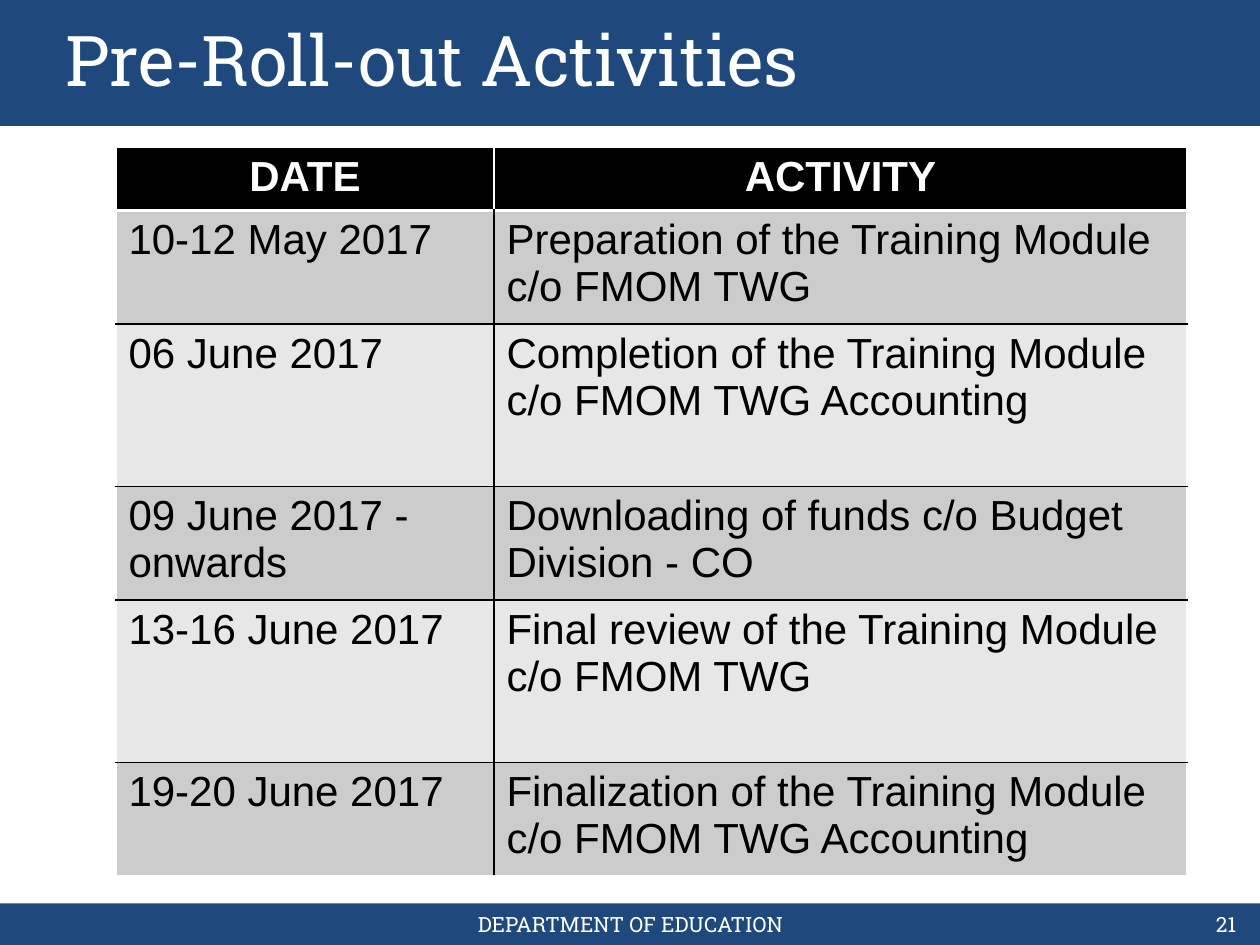
from dataclasses import dataclass

from lxml import etree
from pptx import Presentation
from pptx.dml.color import RGBColor
from pptx.enum.shapes import MSO_SHAPE
from pptx.enum.text import MSO_ANCHOR, PP_ALIGN
from pptx.oxml.ns import qn
from pptx.util import Inches, Pt

RECTANGLE = MSO_SHAPE.RECTANGLE
TOP, MIDDLE = MSO_ANCHOR.TOP, MSO_ANCHOR.MIDDLE
LEFT, CENTER, RIGHT = PP_ALIGN.LEFT, PP_ALIGN.CENTER, PP_ALIGN.RIGHT


@dataclass(frozen=True)
class Theme:
    blue: str = "1F497D"
    white: str = "FFFFFF"
    black: str = "000000"
    bands: tuple = ("CCCCCC", "E7E7E7")
    heading_font: str = "Roboto Slab"
    body_font: str = "Arial"
    title_size: int = 40
    table_size: int = 24
    footer_size: int = 12


THEME = Theme()

HEADINGS = ("DATE", "ACTIVITY")
ACTIVITIES = (
    ("10-12 May 2017", "Preparation of the Training Module c/o FMOM TWG"),
    ("06 June 2017", "Completion of the Training Module c/o FMOM TWG Accounting"),
    ("09 June 2017 - onwards", "Downloading of funds c/o Budget Division - CO"),
    ("13-16 June 2017", "Final review of the Training Module c/o FMOM TWG"),
    ("19-20 June 2017", "Finalization of the Training Module c/o FMOM TWG Accounting"),
)
COLUMN_WIDTHS = (3, 5.5)
ROW_HEIGHTS = (0.5, 0.89, 1.29, 0.89, 1.29, 0.89)


def write(text_frame, text, font, size, color, align=LEFT, bold=False):
    paragraph = text_frame.paragraphs[0]
    paragraph.alignment = align
    run = paragraph.add_run()
    run.text = text
    run.font.name = font
    run.font.size = Pt(size)
    run.font.bold = bold
    run.font.color.rgb = RGBColor.from_string(color)


def add_band(slide, left, top, width, height):
    shape = slide.shapes.add_shape(
        RECTANGLE, Inches(left), Inches(top), Inches(width), Inches(height))
    shape.shadow.inherit = False
    shape.fill.solid()
    shape.fill.fore_color.rgb = RGBColor.from_string(THEME.blue)
    shape.line.fill.background()


def add_label(slide, box, text, size, align=LEFT, anchor=TOP):
    shape = slide.shapes.add_textbox(*(Inches(length) for length in box))
    shape.text_frame.word_wrap = True
    shape.text_frame.vertical_anchor = anchor
    write(shape.text_frame, text, THEME.heading_font, size, THEME.white, align)


def add_header(slide, left, top, width, height):
    add_band(slide, left, top, width, height)
    add_label(slide, (left + 0.42, top + 0.08, width - 1, 1.25),
              "Pre-Roll-out Activities", THEME.title_size)


def add_footer(slide, left, top, width, height):
    add_band(slide, left, top, width, height)
    add_label(slide, (left + 3.42, top, 3.17, height),
              "DEPARTMENT OF EDUCATION", THEME.footer_size, CENTER, MIDDLE)
    add_label(slide, (left + 7.58, top, 2.33, height),
              "21", THEME.footer_size, RIGHT, MIDDLE)


def set_border(cell, side, color, points):
    properties = cell._tc.get_or_add_tcPr()
    line = etree.SubElement(properties, qn(f"a:ln{side}"), w=str(Pt(points)))
    fill = etree.SubElement(line, qn("a:solidFill"))
    etree.SubElement(fill, qn("a:srgbClr"), val=color)


def set_inner_borders(cell, row, column):
    """Rule only the inside edges; the header has white rules."""
    upright = THEME.white if row == 0 else THEME.black
    rule_above = (THEME.white, 2) if row == 1 else (THEME.black, 1)
    rule_below = (THEME.white, 2) if row == 0 else (THEME.black, 1)
    set_border(cell, "R" if column == 0 else "L", upright, 1)
    if row > 0:
        set_border(cell, "T", *rule_above)
    if row < len(ACTIVITIES):
        set_border(cell, "B", *rule_below)


def add_schedule(slide, left, top, width, height):
    rows = (HEADINGS, *ACTIVITIES)
    table = slide.shapes.add_table(
        len(rows), len(HEADINGS), Inches(left), Inches(top),
        Inches(width), Inches(height)).table
    for column, column_width in zip(table.columns, COLUMN_WIDTHS):
        column.width = Inches(column_width)
    for row, row_height in zip(table.rows, ROW_HEIGHTS):
        row.height = Inches(row_height)

    for row_index, texts in enumerate(rows):
        is_header = row_index == 0
        background = THEME.black if is_header else THEME.bands[(row_index - 1) % 2]
        for column_index, text in enumerate(texts):
            cell = table.cell(row_index, column_index)
            set_inner_borders(cell, row_index, column_index)
            cell.fill.solid()
            cell.fill.fore_color.rgb = RGBColor.from_string(background)
            write(cell.text_frame, text, THEME.body_font, THEME.table_size,
                  THEME.white if is_header else THEME.black,
                  CENTER if is_header else LEFT, is_header)


def main():
    presentation = Presentation()
    presentation.slide_width = Inches(10)
    presentation.slide_height = Inches(7.5)
    slide = presentation.slides.add_slide(presentation.slide_layouts[6])

    # Bands with title and footer
    add_header(slide, 0, 0, 10, 1)
    add_footer(slide, 0, 7.17, 10, 0.33)

    # Schedule of activities
    add_schedule(slide, 0.92, 1.17, sum(COLUMN_WIDTHS), sum(ROW_HEIGHTS))

    presentation.save("out.pptx")


if __name__ == "__main__":
    main()
